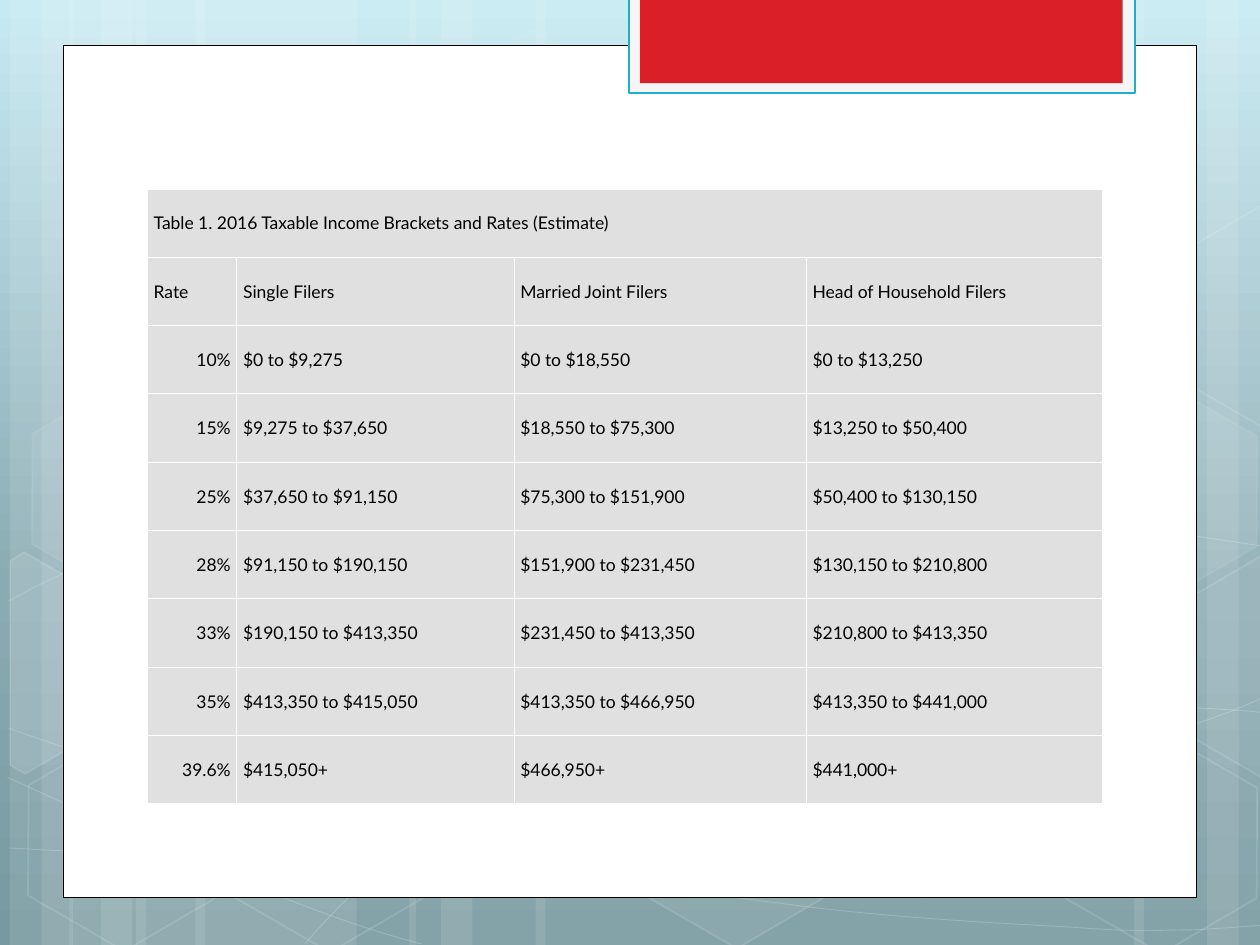
"""Build a slide with a tax bracket table on a card over a layered backdrop."""
import copy
import math

import lxml.etree
import pptx
import pptx.dml.color
import pptx.enum.shapes
import pptx.enum.text
import pptx.oxml.ns
import pptx.util

SLIDE_W, SLIDE_H = 10, 7.5
SKY = [(0, "C7EAF2"), (0.62, "8BABB3"), (1, "7799A0")]

BANDS = [(1.08, 1.75, 0), (0.08, 0.5, 0), (0.33, 0.83, 0), (1.55, 1.75, 0), (0.55, 0.5, 0),
         (0.8, 0.83, 0), (7.33, 1.75, 180), (9.58, 0.5, 180), (9, 0.83, 180), (4.25, 3.08, 0),
         (3.25, 0.5, 0), (3.5, 0.83, 0)]

CURVES = [
    [(0.07, 6.73), (0.61, 6.76), (1.15, 6.79), (1.9, 6.78), (2.65, 6.77), (3.58, 6.75),
     (4.58, 6.65), (5.58, 6.55), (7, 6.36), (7.92, 6.17), (8.83, 5.98), (9.77, 5.68), (10.07, 5.51)],
    [(0.07, 4.77), (0.36, 4.61), (0.65, 4.46), (1.21, 4.31), (1.78, 4.16), (2.59, 3.94),
     (3.47, 3.87), (4.36, 3.8), (5.44, 3.79), (6.54, 3.87), (7.64, 3.95), (9.47, 4.26), (10.07, 4.34)],
    [(0.06, 6.17), (1.27, 6.72), (2.47, 7.27), (3.34, 7.49)],
    [(0.07, 5.78), (0.38, 5.89), (0.7, 6), (1.28, 6.16), (1.86, 6.31), (2.73, 6.56),
     (3.57, 6.73), (4.4, 6.9), (5.45, 7.08), (6.28, 7.18), (7.11, 7.29), (8, 7.33),
     (8.53, 7.36), (9.05, 7.4), (9.19, 7.38), (9.45, 7.38), (9.71, 7.37), (9.89, 7.35), (10.07, 7.34)],
    [(2.42, 7.49), (2.6, 7.29), (2.78, 7.09), (3.02, 6.91), (3.26, 6.73), (3.6, 6.53),
     (3.88, 6.39), (4.16, 6.25), (4.33, 6.19), (4.7, 6.09), (5.06, 5.99), (5.73, 5.85),
     (6.08, 5.78), (6.44, 5.71), (6.49, 5.71), (6.8, 5.69), (7.11, 5.66), (7.6, 5.63),
     (7.94, 5.62), (8.29, 5.61), (8.86, 5.62), (8.86, 5.62), (9.53, 5.62), (9.71, 5.63),
     (9.88, 5.64), (9.97, 5.65), (10.06, 5.66), (10.03, 5.65), (10.06, 5.66)],
]
STRAIGHT_ENDS = [(9.53, 5.62)]

HEX_W, HEX_H, HEX_TILT = 1.75, 1.52, 30
HEXAGONS = [(3.34, 0.36, 4, 8), (4.97, 5.89, 6, 12), None, (0.11, 5.91, 0, 12), (0.14, 3.12, 7, 8),
            (1.74, 5.92, 0, 12), (7.53, 4.53, 10, 12), (8.34, 5.93, 0, 12), (8.34, 3.14, 7, 8),
            None, None]
CUT_HEXAGONS = [
    ((0.36, 5.35), 10, [(0.08, 4.45), (0.19, 4.38), (0.96, 4.82), (0.95, 5.7), (0.2, 6.14), (0.08, 6.07)]),
    ((9.85, 5.2), 4, [(9.26, 4.85), (10.01, 4.41), (10.09, 4.46), (10.09, 6.13), (10.02, 6.17), (9.26, 5.73)]),
    ((9.85, 2.41), 0, [(9.26, 2.07), (10.01, 1.63), (10.1, 1.68), (10.09, 3.35), (10.02, 3.39), (9.26, 2.95)]),
]

PANELS = [((0.5, 0.36, 9, 6.76), "FFFFFF", "000000", 0.5),
          ((4.99, -0.02, 4.02, 0.76), "F5F5F5", "1FAECD", 1.25),
          ((5.08, -0.02, 3.83, 0.68), "DA1F28", None, 0)]

ROWS = [
    ("Table 1. 2016 Taxable Income Brackets and Rates (Estimate)",),
    ("Rate", "Single Filers", "Married Joint Filers", "Head of Household Filers"),
    ("10%", "$0 to $9,275", "$0 to $18,550", "$0 to $13,250"),
    ("15%", "$9,275 to $37,650", "$18,550 to $75,300", "$13,250 to $50,400"),
    ("25%", "$37,650 to $91,150", "$75,300 to $151,900", "$50,400 to $130,150"),
    ("28%", "$91,150 to $190,150", "$151,900 to $231,450", "$130,150 to $210,800"),
    ("33%", "$190,150 to $413,350", "$231,450 to $413,350", "$210,800 to $413,350"),
    ("35%", "$413,350 to $415,050", "$413,350 to $466,950", "$413,350 to $441,000"),
    ("39.6%", "$415,050+", "$466,950+", "$441,000+"),
]
TABLE_X, TABLE_Y, TABLE_H = 1.17, 1.5, 4.88
COLUMNS = [0.71, 2.2, 2.32, 2.35]

SHAPE = pptx.enum.shapes.MSO_SHAPE
ALIGN = pptx.enum.text.PP_ALIGN
inch = pptx.util.Inches
qn = pptx.oxml.ns.qn


def rgb(hex_color):
    return pptx.dml.color.RGBColor.from_string(hex_color)


def paint(fill, color, parent=None, alpha=100):
    if not color or not alpha:
        fill.background()
        return
    fill.solid()
    fill.fore_color.rgb = rgb(color)
    if alpha < 100:
        clr = parent.find(qn("a:solidFill")).find(qn("a:srgbClr"))
        lxml.etree.SubElement(clr, qn("a:alpha"), val=str(alpha * 1000))


def style(sp, fill=None, alpha=100, line=None, width=0, line_alpha=100):
    sp.shadow.inherit = False
    paint(sp.fill, fill, sp.element.spPr, alpha)
    if line:
        sp.line.width = pptx.util.Pt(width)
    paint(sp.line.fill, line, sp.element.spPr.find(qn("a:ln")), line_alpha)


def add_box(s, kind, box):
    return s.shapes.add_shape(kind, *map(inch, box))


def add_outline(s, points):
    emu = [(inch(x), inch(y)) for x, y in points]
    builder = s.shapes.build_freeform(*emu[0], scale=1.0)
    builder.add_line_segments(emu[1:], close=False)
    return builder.convert_to_shape()


def add_curve(s, points):
    sp = add_outline(s, points)
    bezier = None
    for point, ln in zip(points[1:], list(sp.element.iter(qn("a:lnTo")))):
        if point in STRAIGHT_ENDS:
            continue
        if bezier is None or len(bezier) == 3:
            bezier = lxml.etree.Element(qn("a:cubicBezTo"))
            ln.addprevious(bezier)
        bezier.append(ln[0])
        ln.getparent().remove(ln)
    return sp


def add_cut_hexagon(s, centre, alpha, points):
    cos, sin = math.cos(math.radians(HEX_TILT)), math.sin(math.radians(HEX_TILT))
    cx, cy = centre
    level = [(cx + (x - cx) * cos + (y - cy) * sin, cy - (x - cx) * sin + (y - cy) * cos)
             for x, y in points]
    sp = add_outline(s, level + level[:1])
    lxml.etree.SubElement(next(sp.element.iter(qn("a:path"))), qn("a:close"))
    sp.rotation = HEX_TILT
    style(sp, "FFFFFF", alpha, "FFFFFF", 1, 12)


def add_sky(s):
    fill = s.background.fill
    fill.gradient()
    fill.gradient_angle = 270
    stops = next(s.element.iter(qn("a:gsLst")))
    stops.append(copy.deepcopy(stops[-1]))
    for stop, (position, color) in zip(fill.gradient_stops, SKY):
        stop.position = position
        stop.color.rgb = rgb(color)


def add_backdrop(s):
    for x, w, turn in BANDS:
        sp = add_box(s, SHAPE.RECTANGLE, (x, 0, w, SLIDE_H))
        sp.rotation = turn
        style(sp, "FFFFFF", 10)
    for curve in CURVES:
        style(add_curve(s, curve), line="FFFFFF", width=0.5, line_alpha=20)
    cuts = iter(CUT_HEXAGONS)
    for hexagon in HEXAGONS:
        if hexagon is None:
            add_cut_hexagon(s, *next(cuts))
            continue
        x, y, alpha, line_alpha = hexagon
        sp = add_box(s, SHAPE.HEXAGON, (x, y, HEX_W, HEX_H))
        sp.adjustments[0] = 0.285
        sp.rotation = HEX_TILT
        style(sp, "FFFFFF", alpha, "FFFFFF", 1, line_alpha)
    for box, fill, line, width in PANELS:
        style(add_box(s, SHAPE.RECTANGLE, box), fill, line=line, width=width)


def add_borders(cell):
    props = cell._tc.get_or_add_tcPr()
    for i, side in enumerate(("lnL", "lnR", "lnT", "lnB")):
        ln = lxml.etree.Element(qn("a:" + side), w=str(pptx.util.Pt(0.75)))
        solid = lxml.etree.SubElement(ln, qn("a:solidFill"))
        lxml.etree.SubElement(solid, qn("a:srgbClr"), val="FFFFFF")
        props.insert(i, ln)


def add_brackets(s):
    table = s.shapes.add_table(len(ROWS), len(COLUMNS), inch(TABLE_X), inch(TABLE_Y),
                               inch(sum(COLUMNS)), inch(TABLE_H)).table
    for column, w in zip(table.columns, COLUMNS):
        column.width = inch(w)
    table.cell(0, 0).merge(table.cell(0, len(COLUMNS) - 1))
    for i, cell in enumerate(table.iter_cells()):
        row, col = divmod(i, len(COLUMNS))
        paint(cell.fill, "E0E0E0")
        add_borders(cell)
        cell.vertical_anchor = pptx.enum.text.MSO_ANCHOR.MIDDLE
        cell.margin_left = cell.margin_right = cell.margin_top = cell.margin_bottom = inch(0.05)
        if col < len(ROWS[row]):
            p = cell.text_frame.paragraphs[0]
            p.text = ROWS[row][col]
            p.alignment = ALIGN.RIGHT if col == 0 and row > 1 else ALIGN.LEFT
            font = p.runs[0].font
            font.name, font.size, font.bold = "Lato", pptx.util.Pt(10), False
            font.color.rgb = rgb("000000")


prs = pptx.Presentation()
prs.slide_width, prs.slide_height = inch(SLIDE_W), inch(SLIDE_H)
s = prs.slides.add_slide(prs.slide_layouts[6])
add_sky(s)
add_backdrop(s)
add_brackets(s)
prs.save("out.pptx")
